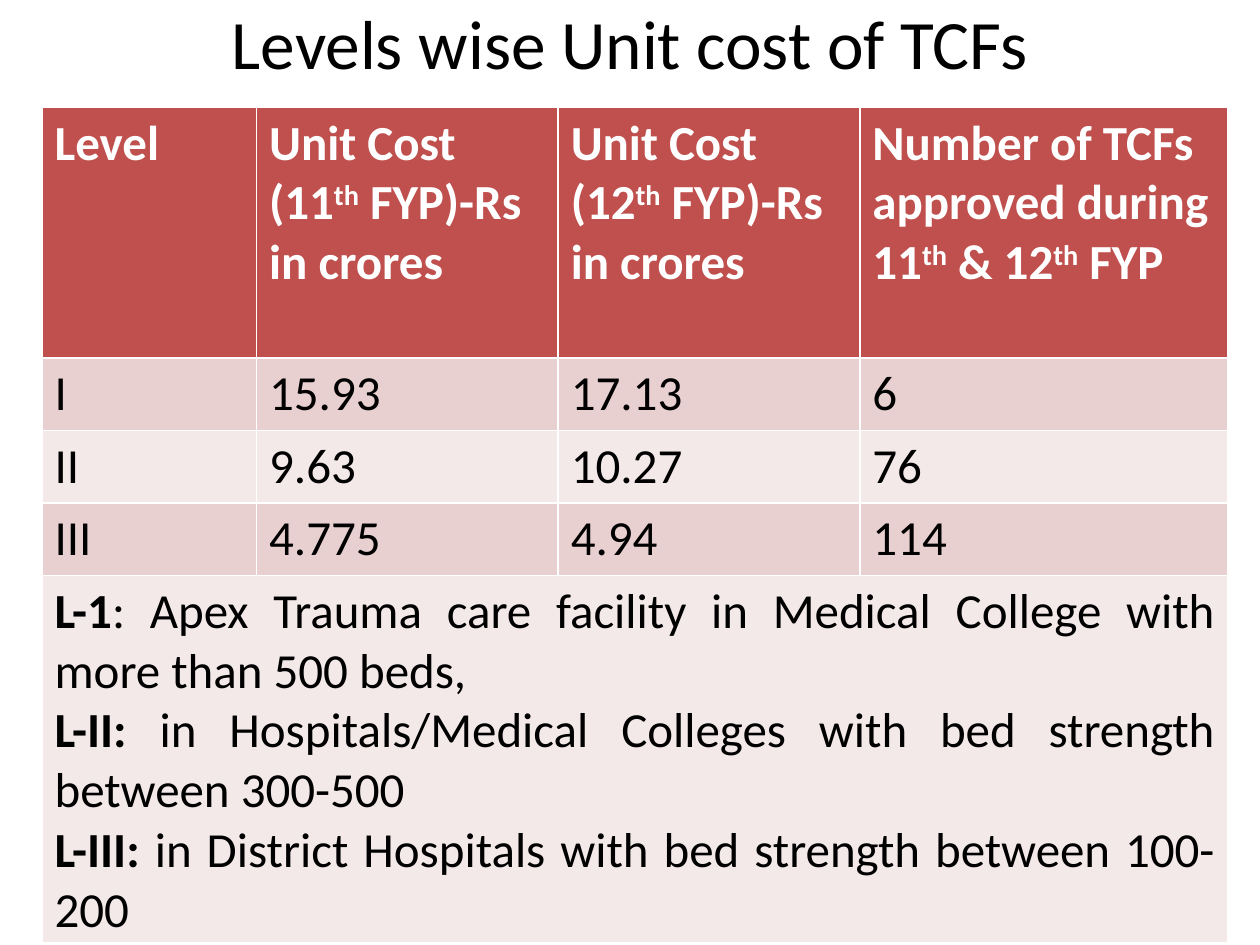
from pptx import Presentation
from pptx.dml.color import RGBColor
from pptx.enum.text import MSO_ANCHOR, PP_ALIGN
from pptx.util import Pt

CENTER = PP_ALIGN.CENTER
JUSTIFY = PP_ALIGN.JUSTIFY
MIDDLE = MSO_ANCHOR.MIDDLE

BLACK = RGBColor(0x00, 0x00, 0x00)
WHITE = RGBColor(0xFF, 0xFF, 0xFF)
HEADER_RED = RGBColor(0xC0, 0x50, 0x4D)
BAND_DARK = RGBColor(0xE8, 0xD0, 0xD0)
BAND_LIGHT = RGBColor(0xF4, 0xE9, 0xE9)

FONT = "Calibri"
BODY_SIZE = 28
COLUMN_WIDTHS = (122.6, 172.4, 172.4, 210)
ROW_HEIGHTS = (143.4, 41.4, 41.4, 41.4, 210)

HEADINGS = (
    ("Level",),
    ("Unit Cost (11", "th", " FYP)-Rs in crores"),
    ("Unit Cost (12", "th", " FYP)-Rs in crores"),
    ("Number of TCFs approved during 11", "th", " & 12", "th", " FYP"),
)
LEVELS = (
    ("I", "15.93", "17.13", "6"),
    ("II", "9.63", "10.27", "76"),
    ("III", "4.775", "4.94", "114"),
)
DEFINITIONS = (
    ("L-1", ": Apex Trauma care facility in Medical College with more than 500 beds, "),
    ("L-II:", " in Hospitals/Medical Colleges with bed strength between 300-500 "),
    ("L-III:", " in District Hospitals with bed strength between 100-200 "),
)


def add_run(paragraph, text, color=BLACK, size=BODY_SIZE, bold=False, superscript=False):
    """Append one formatted run to the paragraph."""
    run = paragraph.add_run()
    run.text = text
    run.font.name = FONT
    run.font.size = Pt(size)
    run.font.bold = bold
    run.font.color.rgb = color
    if superscript:
        run.font._element.set("baseline", "30000")


def fill_cell(cell, color):
    """Give the cell a solid fill and return its first paragraph."""
    cell.fill.solid()
    cell.fill.fore_color.rgb = color
    return cell.text_frame.paragraphs[0]


def add_title(slide, left, top, width, height):
    """Place the centred heading in the given box."""
    frame = slide.shapes.add_textbox(Pt(left), Pt(top), Pt(width), Pt(height)).text_frame
    frame.word_wrap = True
    frame.vertical_anchor = MIDDLE
    heading = frame.paragraphs[0]
    heading.alignment = CENTER
    add_run(heading, "Levels wise Unit cost of TCFs", size=39.6)


def add_cost_table(slide, left, top, width, height):
    """Place the cost table with its closing row of level definitions."""
    table = slide.shapes.add_table(
        len(ROW_HEIGHTS), len(COLUMN_WIDTHS), Pt(left), Pt(top), Pt(width), Pt(height)
    ).table
    for column, column_width in zip(table.columns, COLUMN_WIDTHS):
        column.width = Pt(column_width)
    for row, row_height in zip(table.rows, ROW_HEIGHTS):
        row.height = Pt(row_height)

    for column_index, pieces in enumerate(HEADINGS):
        heading = fill_cell(table.cell(0, column_index), HEADER_RED)
        for piece in pieces:
            add_run(heading, piece, WHITE, bold=True, superscript=piece == "th")

    for row_index, values in enumerate(LEVELS, start=1):
        band = BAND_DARK if row_index % 2 else BAND_LIGHT
        for column_index, value in enumerate(values):
            add_run(fill_cell(table.cell(row_index, column_index), band), value)

    last_row = len(ROW_HEIGHTS) - 1
    definition_cell = table.cell(last_row, 0)
    definition_cell.merge(table.cell(last_row, len(COLUMN_WIDTHS) - 1))
    paragraph = fill_cell(definition_cell, BAND_LIGHT)
    for index, (level, meaning) in enumerate(DEFINITIONS):
        if index:
            paragraph = definition_cell.text_frame.add_paragraph()
        paragraph.alignment = JUSTIFY
        add_run(paragraph, level, bold=True)
        add_run(paragraph, meaning)


def main():
    """Build and save the slide."""
    presentation = Presentation()
    presentation.slide_width = Pt(720)
    presentation.slide_height = Pt(540)
    slide = presentation.slides.add_slide(presentation.slide_layouts[6])
    add_title(slide, 0, 0, 720, 48)
    add_cost_table(slide, 24, 61.2, sum(COLUMN_WIDTHS), sum(ROW_HEIGHTS))
    presentation.save("out.pptx")


if __name__ == "__main__":
    main()
